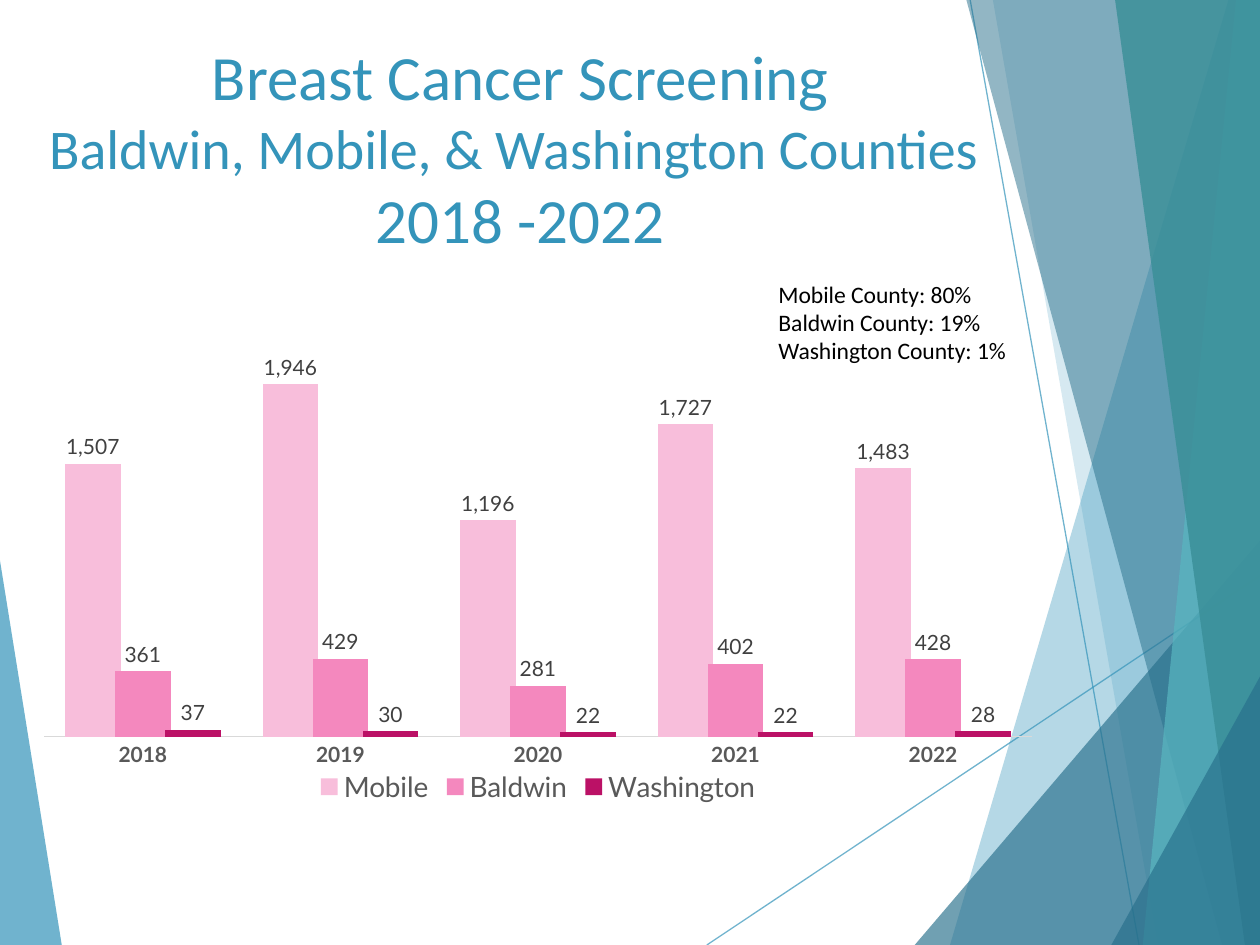
import pptx
import pptx.chart.data
import pptx.dml.color
import pptx.enum.chart
import pptx.enum.shapes
import pptx.enum.text
import pptx.oxml
import pptx.oxml.ns
import pptx.util
from lxml import etree

Inches, Pt = pptx.util.Inches, pptx.util.Pt
qn = pptx.oxml.ns.qn
BLUE, NAVY = "3494BA", "276F8B"


def color(text):
    return pptx.dml.color.RGBColor.from_string(text)


def fade(fill, alpha):
    """Set the opacity, in percent, of a solid fill or line."""
    tint = fill._xPr.find(qn("a:solidFill"))[0]
    etree.SubElement(tint, qn("a:alpha")).set("val", str(alpha * 1000))


class Deck:
    face = "Calibri"
    data = "Lato"

    def __init__(self):
        self.prs = pptx.Presentation()
        self.prs.slide_width, self.prs.slide_height = Inches(10), Inches(7.5)
        self.slide = self.prs.slides.add_slide(self.prs.slide_layouts[5])
        self.shapes = self.slide.shapes

    def style(self, font, size, tint, face, bold=False):
        font.size, font.name, font.bold = Pt(size), face, bold
        font.color.rgb = color(tint)

    def run(self, para, text, size, tint):
        run = para.add_run()
        run.text = text
        self.style(run.font, size, tint, self.face)

    def facet(self, points, tint, alpha):
        spots = [(Inches(x), Inches(y)) for x, y in points]
        pen = self.shapes.build_freeform(*spots[0])
        pen.add_line_segments(spots[1:], close=True)
        shape = pen.convert_to_shape()
        shape.shadow.inherit = False
        shape.fill.solid()
        shape.fill.fore_color.rgb = color(tint)
        fade(shape.fill, alpha)
        shape.line.fill.background()

    def line(self, x1, y1, x2, y2):
        line = self.shapes.add_connector(
            pptx.enum.shapes.MSO_CONNECTOR.STRAIGHT,
            Inches(x1), Inches(y1), Inches(x2), Inches(y2))
        line.line.width = Pt(0.75)
        line.line.color.rgb = color(BLUE)
        fade(line.line.fill, 70)
        etree.SubElement(line._element.spPr, qn("a:effectLst"))

    def title(self, lines, x, y, w, h):
        box = self.shapes.title
        box.left, box.top, box.width, box.height = map(Inches, (x, y, w, h))
        frame = box.text_frame
        frame.word_wrap = True
        frame.auto_size = pptx.enum.text.MSO_AUTO_SIZE.NONE
        frame.vertical_anchor = pptx.enum.text.MSO_ANCHOR.TOP
        para = frame.paragraphs[0]
        para.alignment = pptx.enum.text.PP_ALIGN.CENTER
        for i, (text, size) in enumerate(lines):
            if i:
                para.add_line_break()
            self.run(para, text, size, BLUE)
        # Bring the title in front of the facets
        self.shapes._spTree.append(box._element)

    def note(self, lines, x, y, w, h):
        frame = self.shapes.add_textbox(*map(Inches, (x, y, w, h))).text_frame
        frame.word_wrap = True
        for i, text in enumerate(lines):
            para = frame.add_paragraph() if i else frame.paragraphs[0]
            self.run(para, text, 13.5, "000000")

    def chart(self, cats, rows, x, y, w, h):
        data = pptx.chart.data.CategoryChartData(number_format="#,##0")
        data.categories = cats
        for name, _, vals in rows:
            data.add_series(name, vals)
        kind = pptx.enum.chart.XL_CHART_TYPE.COLUMN_CLUSTERED
        chart = self.shapes.add_chart(
            kind, *map(Inches, (x, y, w, h)), data).chart
        chart.has_title = False
        self.style(chart.font, 10, "000000", self.data)

        # Columns and their labels
        plot = chart.plots[0]
        plot.gap_width, plot.overlap, plot.vary_by_categories = 75, 10, False
        for series, (_, tint, _) in zip(plot.series, rows):
            series.format.fill.solid()
            series.format.fill.fore_color.rgb = color(tint)
            tags = series.data_labels
            tags.show_value = True
            tags.number_format, tags.number_format_is_linked = "#,##0", False
            tags.position = pptx.enum.chart.XL_LABEL_POSITION.OUTSIDE_END
            self.style(tags.font, 12, "404040", self.data)

        # Axes
        none = pptx.enum.chart.XL_TICK_MARK.NONE
        axis = chart.category_axis
        axis.major_tick_mark = axis.minor_tick_mark = none
        axis.format.line.width = Pt(0.75)
        axis.format.line.color.rgb = color("D9D9D9")
        self.style(axis.tick_labels.font, 12, "595959", self.data, True)
        scale = chart.value_axis
        scale.minimum_scale, scale.maximum_scale = 0, 2500
        scale.has_major_gridlines = False
        scale.visible = False

        # Legend
        chart.has_legend = True
        chart.legend.position = pptx.enum.chart.XL_LEGEND_POSITION.BOTTOM
        chart.legend.include_in_layout = False
        self.style(chart.legend.font, 16, "595959", self.data)

        # Fixed plot area
        area = chart._chartSpace.chart.plotArea
        for old in area.findall(qn("c:layout")):
            area.remove(old)
        layout = etree.Element(qn("c:layout"))
        area.insert(0, layout)
        manual = etree.SubElement(layout, qn("c:manualLayout"))
        for tag, val in (("layoutTarget", "inner"), ("xMode", "edge"),
                         ("yMode", "edge"), ("x", 0.01), ("y", 0.02),
                         ("w", 0.98), ("h", 0.845)):
            etree.SubElement(manual, qn("c:" + tag)).set("val", str(val))


def main():
    deck = Deck()

    # Side decoration, from back to front
    deck.facet([(0, 4.45), (0.49, 7.5), (0, 7.5)], BLUE, 70)
    deck.line(5.61, 7.5, 10, 4.57)
    deck.line(7.7, 0, 9.04, 7.5)
    # Each facet: top left x, top y, bottom left x, colour, opacity
    for top, y, foot, tint, alpha in (
            (9.75, 0, 7.54, BLUE, 36),
            (7.88, 0, 9.19, BLUE, 20),
            (10, 4.29, 7.26, NAVY, 66),
            (7.67, 0, 9.7, NAVY, 50),
            (9.81, 0, 9.07, "58B6C0", 70),
            (8.85, 0, 9.88, "3A8F98", 82),
            (10, 5.37, 8.82, NAVY, 66)):
        deck.facet([(top, y), (foot, 7.5), (10, 7.5), (10, y)], tint, alpha)

    deck.title([("Breast Cancer Screening", 36),
                ("Baldwin, Mobile, & Washington Counties ", 32),
                ("2018 -2022", 36)], 0.17, 0.25, 7.92, 1.66)

    # Screenings by county and year
    deck.chart(["2018", "2019", "2020", "2021", "2022"], [
        ("Mobile", "F8BEDB", (1507, 1946, 1196, 1727, 1483)),
        ("Baldwin", "F488BE", (361, 429, 281, 402, 428)),
        ("Washington", "BB1166", (37, 30, 22, 22, 28)),
    ], 0.27, 2.17, 8, 4.25)

    deck.note(["Mobile County: 80%", "Baldwin County: 19%",
               "Washington County: 1%"], 6.08, 2.17, 2.31, 0.78)

    deck.prs.save("out.pptx")


if __name__ == "__main__":
    main()
